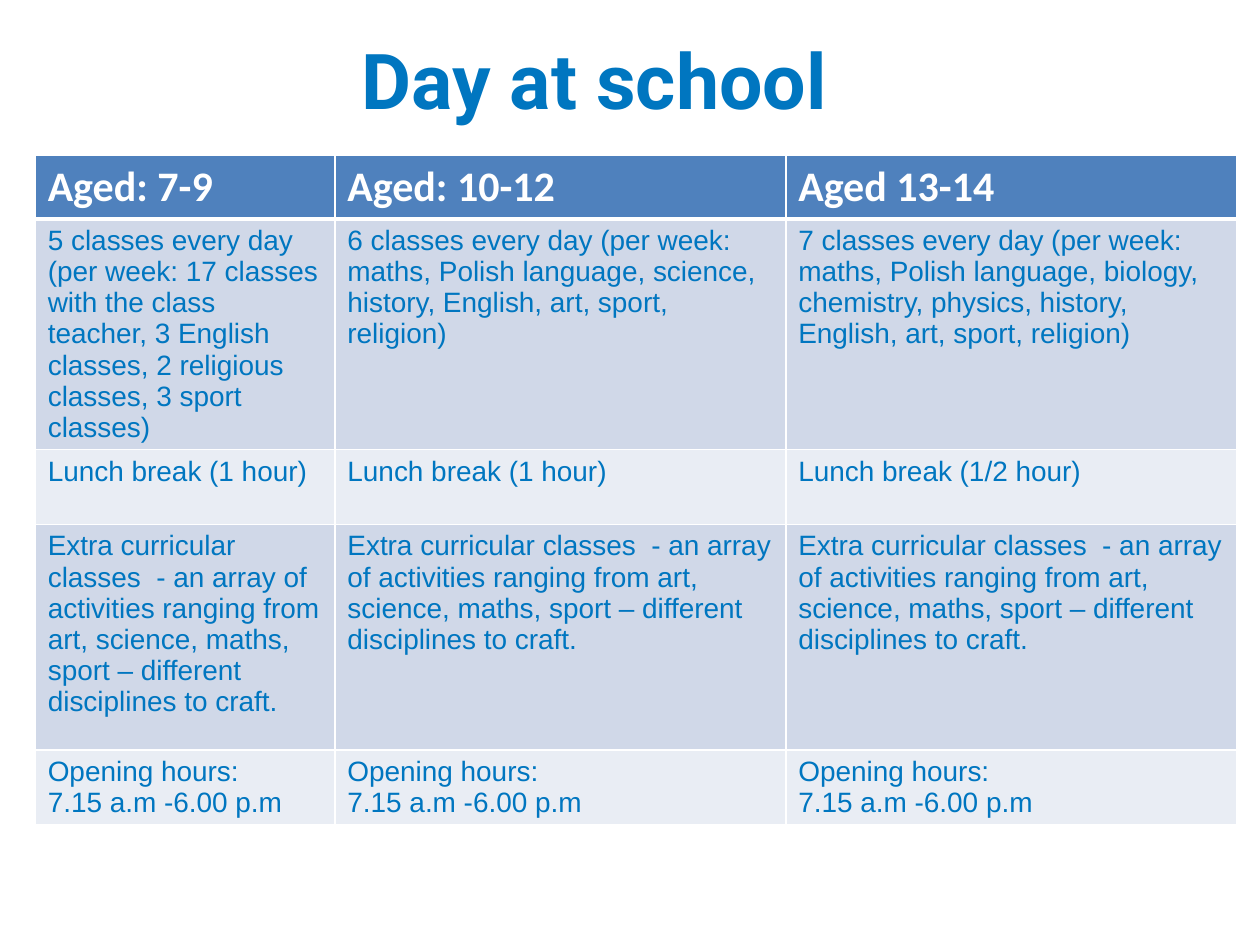
from lxml import etree
from pptx import Presentation
from pptx.dml.color import RGBColor
from pptx.enum.text import MSO_ANCHOR, PP_ALIGN
from pptx.oxml.ns import qn
from pptx.util import Cm, Pt

MID = MSO_ANCHOR.MIDDLE
CENTER = PP_ALIGN.CENTER
LEFT = PP_ALIGN.LEFT

BLUE, WHITE = "0076C0", "FFFFFF"
HEAD, DARK, PALE = "4F81BD", "D0D8E8", "E9EDF4"

TITLE = "Day at school "
EXTRA = ("Extra curricular classes  - an array of activities ranging from art, "
         "science, maths, sport – different disciplines to craft.")
HOURS = "Opening hours:\n7.15 a.m -6.00 p.m"
ROWS = [
    ["Aged: 7-9", "Aged: 10-12", "Aged 13-14"],
    ["5 classes every day (per week: 17 classes with the class teacher, "
     "3 English classes, 2 religious classes, 3 sport classes)",
     "6 classes every day (per week: maths, Polish language, science, "
     "history, English, art, sport, religion)",
     "7 classes every day (per week: maths, Polish language, biology, "
     "chemistry, physics, history, English, art, sport, religion)"],
    ["Lunch break (1 hour)", "Lunch break (1 hour)", "Lunch break (1/2 hour)"],
    [EXTRA] * 3,
    [HOURS] * 3,
]
WIDTHS = [6.04, 9.09, 9.09]
HEIGHTS = [1.26, 4.63, 1.51, 4.55, 1.51]


def color(code):
    return RGBColor.from_string(code)


def write(frame, text, size=16, font="Arial", ink=BLUE, bold=False, align=LEFT):
    frame.word_wrap = True
    frame.text = text
    for para in frame.paragraphs:
        para.alignment = align
        for run in para.runs:
            run.font.size = Pt(size)
            run.font.name = font
            run.font.bold = bold
            run.font.color.rgb = color(ink)


def border(cell, sides):
    props = cell._tc.get_or_add_tcPr()
    for spot, (side, width) in enumerate(sides.items()):
        line = etree.Element(qn("a:ln" + side), w=str(Pt(width)))
        fill = etree.SubElement(line, qn("a:solidFill"))
        etree.SubElement(fill, qn("a:srgbClr"), val=WHITE)
        props.insert(spot, line)


def main():
    deck = Presentation()
    deck.slide_width, deck.slide_height = Cm(25.4), Cm(19.05)
    slide = deck.slides.add_slide(deck.slide_layouts[5])

    title = slide.shapes.title
    title.left, title.top = Cm(1.9), Cm(0)
    title.width, title.height = Cm(20.55), Cm(3.18)
    title.text_frame.vertical_anchor = MID
    write(title.text_frame, TITLE, size=44, font="Roboto", bold=True, align=CENTER)

    table = slide.shapes.add_table(
        len(ROWS), len(WIDTHS), Cm(0.71), Cm(3.13),
        Cm(sum(WIDTHS)), Cm(sum(HEIGHTS))).table
    for col, width in zip(table.columns, WIDTHS):
        col.width = Cm(width)
    for r, texts in enumerate(ROWS):
        table.rows[r].height = Cm(HEIGHTS[r])
        shade = HEAD if r == 0 else DARK if r % 2 else PALE
        look = dict(size=24, font="Calibri", ink=WHITE, bold=True) if r == 0 else {}
        sides = dict(L=1, R=1, T=3 if r == 1 else 1, B=3 if r == 0 else 1)
        for c, text in enumerate(texts):
            cell = table.cell(r, c)
            cell.fill.solid()
            cell.fill.fore_color.rgb = color(shade)
            border(cell, sides)
            write(cell.text_frame, text, **look)

    deck.save("out.pptx")


if __name__ == "__main__":
    main()
